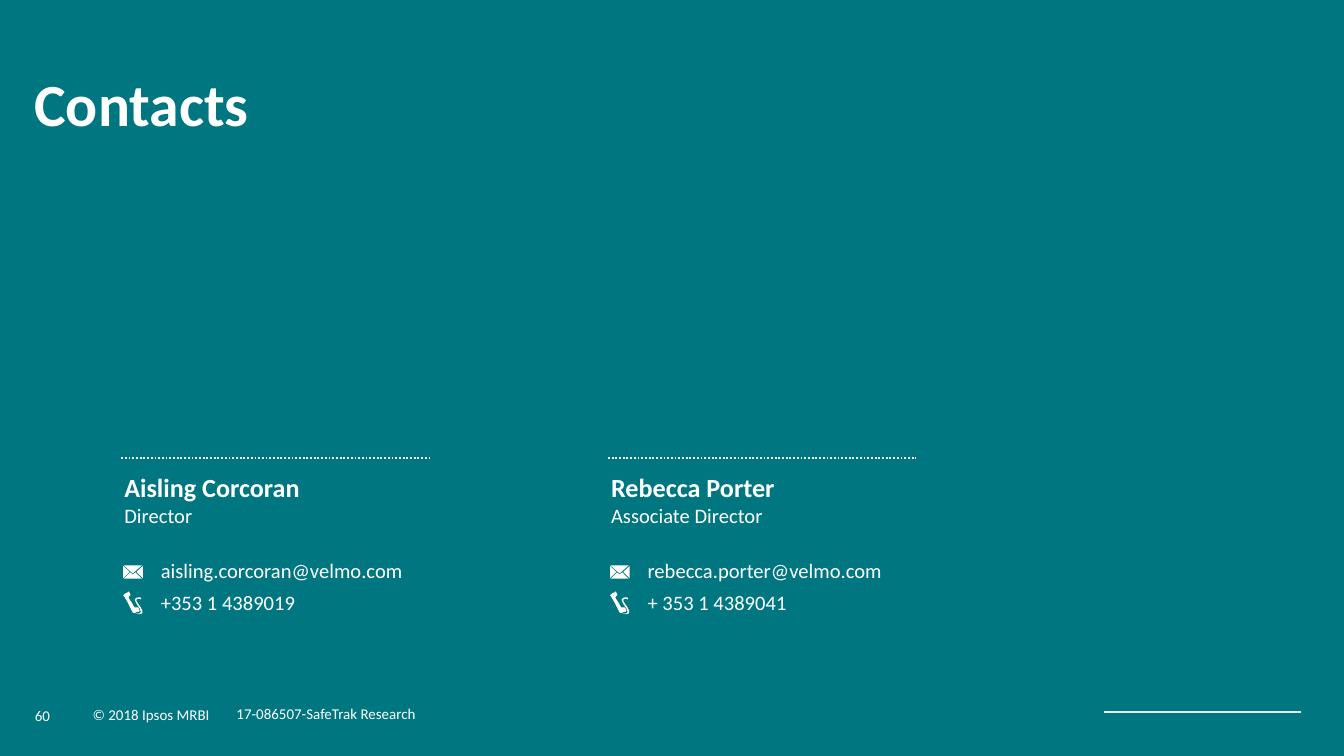
import pptx
import pptx.util
import pptx.dml.color
import pptx.enum.dml
import pptx.enum.shapes
import pptx.enum.text
import pptx.oxml.ns
import lxml.etree

Cm = pptx.util.Cm
Anchor = pptx.enum.text.MSO_ANCHOR

COLORS = {"teal": "007681", "white": "FFFFFF", "rule": "E9E9E9"}
FONT = "Calibri"

TITLE = "Contacts"
FOOTERS = [
    ("60", 0.66, 13.03, 0.86, 0.66, Anchor.BOTTOM),
    ("© 2018 Ipsos MRBI", 1.75, 13.21, 2.6, 0.46, Anchor.BOTTOM),
    ("17-086507-SafeTrak Research", 4.47, 13.11, 6.91, 0.79, Anchor.MIDDLE),
]
CONTACTS = [
    ("Aisling Corcoran", "Director",
     "aisling.corcoran@velmo.com", "+353 1 4389019"),
    ("Rebecca Porter", "Associate Director",
     "rebecca.porter@velmo.com", "+ 353 1 4389041"),
]
CARD_LEFT, CARD_STEP = 2.33, 9.2

ENVELOPE = [
    [(1, 0), (35, 0), (18, 15)],
    [(37, 1), (37, 24), (25, 12)],
    [(0, 1), (0, 24), (12, 12)],
    [(1, 25), (13, 13), (18, 17), (23, 13), (35, 25)],
]
PHONE = [
    [(0, 7), (5, 3), (8, 2), (11, 10), (10, 12), (16, 21), (21, 30),
     (23, 30), (28, 38), (21, 41), (18, 40), (12, 28), (8, 20), (2, 10)],
    [(23, 30), (28, 30), (31, 36), (30, 38), (28, 39)],
    [(8, 2), (11, 0), (14, 7), (10, 10)],
    [(34, 12), (34, 15), (30, 14), (28, 14), (25, 15), (25, 18), (28, 23),
     (33, 30), (36, 36), (36, 41), (33, 43), (28, 43), (23, 41), (28, 42),
     (32, 41), (33, 38), (31, 32), (26, 25), (23, 19), (22, 15), (25, 12),
     (30, 11)],
]


def rgb(name):
    return pptx.dml.color.RGBColor.from_string(COLORS[name])


def add_text(s, lines, x, y, w, h, sizes=(11,), bolds=(False,),
             anchor=Anchor.TOP, spacing=1.0):
    sp = s.shapes.add_textbox(Cm(x), Cm(y), Cm(w), Cm(h))
    tf = sp.text_frame
    tf.margin_left = tf.margin_right = tf.margin_top = tf.margin_bottom = 0
    tf.word_wrap = True
    tf.vertical_anchor = anchor
    for i, (line, size, bold) in enumerate(zip(lines, sizes, bolds)):
        p = tf.add_paragraph() if i else tf.paragraphs[0]
        p.line_spacing = spacing
        r = p.add_run()
        r.text = line
        r.font.name = FONT
        r.font.size = pptx.util.Pt(size)
        r.font.bold = bold
        r.font.color.rgb = rgb("white")


def add_line(s, x, y, w, color, width, dash=None):
    ln = s.shapes.add_connector(pptx.enum.shapes.MSO_CONNECTOR.STRAIGHT,
                                Cm(x), Cm(y), Cm(x + w), Cm(y))
    ln.line.color.rgb = rgb(color)
    ln.line.width = pptx.util.Pt(width)
    if dash:
        ln.line.dash_style = dash
    lxml.etree.SubElement(ln._element.spPr, pptx.oxml.ns.qn("a:effectLst"))


def add_icon(s, outlines, x, y):
    for start, *rest in outlines:
        fb = s.shapes.build_freeform(*start, scale=Cm(0.01))
        fb.add_line_segments(rest, close=True)
        sp = fb.convert_to_shape(Cm(x), Cm(y))
        sp.shadow.inherit = False
        sp.fill.solid()
        sp.fill.fore_color.rgb = rgb("white")
        sp.line.fill.background()


def add_card(s, x, name, role, email, phone):
    add_line(s, x - 0.04, 8.66, 5.83, "white", 1,
             pptx.enum.dml.MSO_LINE.ROUND_DOT)
    add_text(s, [name, role], x + 0.02, 8.92, 4.45, 1.55,
             sizes=(14, 11), bolds=(True, False))
    add_icon(s, ENVELOPE, x, 10.69)
    add_text(s, [email], x + 0.71, 10.54, 5.2, 0.48)
    add_icon(s, PHONE, x, 11.18)
    add_text(s, [phone], x + 0.71, 11.15, 3.2, 0.48)


def main():
    prs = pptx.Presentation()
    prs.slide_width, prs.slide_height = Cm(25.4), Cm(14.29)
    s = prs.slides.add_slide(prs.slide_layouts[6])
    s.background.fill.solid()
    s.background.fill.fore_color.rgb = rgb("teal")

    add_line(s, 20.86, 13.46, 3.73, "rule", 0.75)
    for text, x, y, w, h, anchor in FOOTERS:
        add_text(s, [text], x, y, w, h, sizes=(8,), anchor=anchor,
                 spacing=0.85)
    add_text(s, [TITLE], 0.65, 1.42, 24.03, 1.27, sizes=(32,), bolds=(True,),
             spacing=0.9)
    for i, contact in enumerate(CONTACTS):
        add_card(s, CARD_LEFT + i * CARD_STEP, *contact)
    prs.save("out.pptx")


if __name__ == "__main__":
    main()
